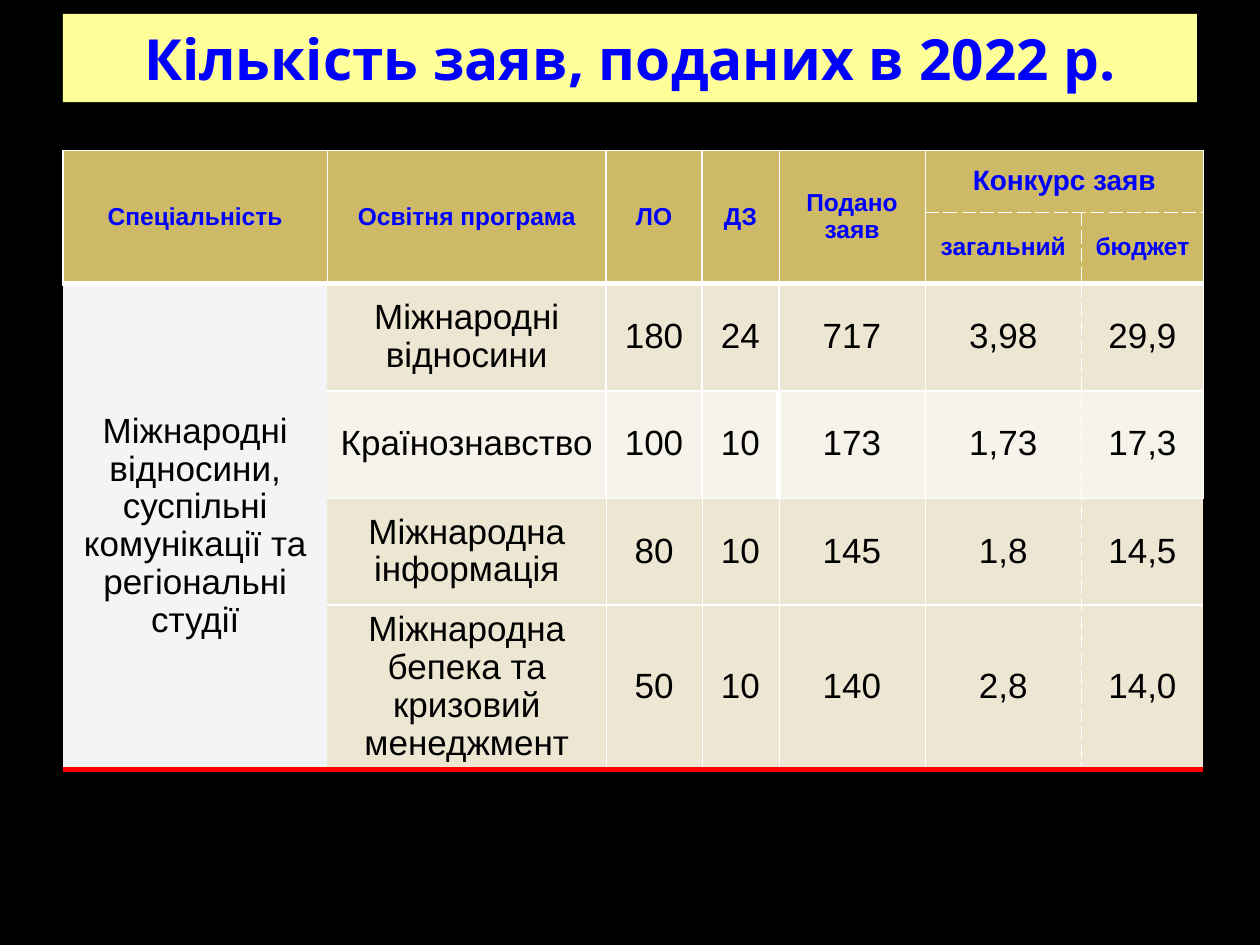
import pptx
import pptx.dml.color
import pptx.enum.shapes
import pptx.enum.text
import pptx.oxml
import pptx.oxml.ns
import pptx.util

Cm = pptx.util.Cm
Pt = pptx.util.Pt

COLORS = {
    "background": "000000", "title": "FFFF99", "heading": "0000FF", "body": "000000",
    "header": "CEB966", "specialty": "F4F3F6", "band": "EDE6D3", "light": "F6F3EA",
    "white": "FFFFFF", "red": "FF0000",
}
TITLE_FORMAT = {"name": "Noto Sans", "size": Pt(32.4), "bold": True}
HEADER_FORMAT = {"name": "Arial", "size": Pt(14), "bold": True}
GROUP_FORMAT = {**HEADER_FORMAT, "size": Pt(16)}
BODY_FORMAT = {"name": "Arial", "size": Pt(20), "bold": False}

COLUMN_WIDTHS = [5.33, 5.62, 1.93, 1.55, 2.95, 3.15, 2.46]
ROW_HEIGHTS = [1.24, 1.45] + [2.16] * 4
ROWS = [
    ["Спеціальність", "Освітня програма", "ЛО", "ДЗ", "Подано заяв", "Конкурс заяв", ""],
    ["", "", "", "", "", "загальний", "бюджет"],
    ["Міжнародні відносини, суспільні комунікації та регіональні студії",
     "Міжнародні відносини", "180", "24", "717", "3,98", "29,9"],
    ["", "Країнознавство", "100", "10", "173", "1,73", "17,3"],
    ["", "Міжнародна інформація", "80", "10", "145", "1,8", "14,5"],
    ["", "Міжнародна бепека та кризовий менеджмент", "50", "10", "140", "2,8", "14,0"],
]
MERGES = [(0, column, 1, column) for column in range(5)] + [(0, 5, 0, 6), (2, 0, 5, 0)]

NONE = None
HAIR = ("white", 0.25, "solid")
DASH = ("white", 0.25, "dash")
THIN = ("white", 1, "solid")
THICK = ("white", 3, "solid")
RED = ("red", 3, "solid")
HORIZONTAL_LINES = [THIN, DASH, THICK, THIN, HAIR, THIN, RED]
HEADER_LINES = [THIN, THIN, THIN, THIN, HAIR, HAIR, DASH, THIN]
LOWER_LINES = [NONE, NONE, HAIR, HAIR, HAIR, HAIR, DASH, NONE]
VERTICAL_LINES = [
    HEADER_LINES,
    HEADER_LINES,
    [NONE, NONE, THIN, THIN, THIN, HAIR, DASH, THIN],
    [NONE, NONE, THIN, THIN, THICK, HAIR, DASH, THIN],
    LOWER_LINES,
    LOWER_LINES,
]
NO_STYLE = "{2D5ABB26-0587-4C30-8999-92F81FD0307C}"


class SlideBuilder:
    def __init__(self, presentation):
        self.slide = presentation.slides.add_slide(presentation.slide_layouts[6])
        self.paint(self.slide.background.fill, "background")

    def paint(self, fill, color):
        fill.solid()
        fill.fore_color.rgb = pptx.dml.color.RGBColor.from_string(COLORS[color])

    def text(self, text_frame, content, color, values, spacing=1.0):
        text_frame.word_wrap = True
        paragraph = text_frame.paragraphs[0]
        paragraph.alignment = pptx.enum.text.PP_ALIGN.CENTER
        paragraph.line_spacing = spacing
        run = paragraph.add_run()
        run.text = content
        for name, value in values.items():
            setattr(run.font, name, value)
        run.font.color.rgb = pptx.dml.color.RGBColor.from_string(COLORS[color])

    def title(self, content, left, top, width, height):
        shape = self.slide.shapes.add_shape(
            pptx.enum.shapes.MSO_SHAPE.RECTANGLE, Cm(left), Cm(top), Cm(width), Cm(height))
        shape.shadow.inherit = False
        shape.line.fill.background()
        self.paint(shape.fill, "title")
        shape.text_frame.vertical_anchor = pptx.enum.text.MSO_ANCHOR.MIDDLE
        self.text(shape.text_frame, content, "heading", TITLE_FORMAT)

    def border(self, cell, side, line):
        if line is None:
            return
        color, width, dash = line
        cell._tc.get_or_add_tcPr().append(pptx.oxml.parse_xml(
            f'<a:ln{side} {pptx.oxml.ns.nsdecls("a")} w="{Pt(width)}">'
            f'<a:solidFill><a:srgbClr val="{COLORS[color]}"/></a:solidFill>'
            f'<a:prstDash val="{dash}"/></a:ln{side}>'))

    def cell(self, cell, row, column, content):
        bottom, right = row + 1, column + 1
        if cell.is_merge_origin:
            bottom, right = row + cell.span_height, column + cell.span_width
        self.border(cell, "L", VERTICAL_LINES[row][column])
        self.border(cell, "R", VERTICAL_LINES[row][right])
        self.border(cell, "T", HORIZONTAL_LINES[row])
        self.border(cell, "B", HORIZONTAL_LINES[bottom])
        if row < 2:
            fill, color = "header", "heading"
            values = GROUP_FORMAT if right - column > 1 else HEADER_FORMAT
        else:
            fill = "specialty" if column == 0 else "light" if row == 3 else "band"
            color, values = "body", BODY_FORMAT
        self.paint(cell.fill, fill)
        cell.vertical_anchor = pptx.enum.text.MSO_ANCHOR.MIDDLE
        self.text(cell.text_frame, content, color, values, 0.97)

    def table(self, left, top, width, height):
        frame = self.slide.shapes.add_table(
            len(ROWS), len(COLUMN_WIDTHS), Cm(left), Cm(top), Cm(width), Cm(height))
        table = frame.table
        table.first_row = table.horz_banding = False
        table._tbl.tblPr.find(pptx.oxml.ns.qn("a:tableStyleId")).text = NO_STYLE
        for column, size in zip(table.columns, COLUMN_WIDTHS):
            column.width = Cm(size)
        for row, size in zip(table.rows, ROW_HEIGHTS):
            row.height = Cm(size)
        frame.height = Cm(height)
        for first_row, first_column, last_row, last_column in MERGES:
            table.cell(first_row, first_column).merge(table.cell(last_row, last_column))
        for row, contents in enumerate(ROWS):
            for column, content in enumerate(contents):
                cell = table.cell(row, column)
                if not cell.is_spanned:
                    self.cell(cell, row, column, content)


def main():
    presentation = pptx.Presentation()
    presentation.slide_width = Cm(25.4)
    presentation.slide_height = Cm(19.05)
    builder = SlideBuilder(presentation)
    builder.title("Кількість заяв, поданих в 2022 р.", 1.27, 0.28, 22.86, 1.78)
    builder.table(1.27, 3.03, 23, 12.78)
    presentation.save("out.pptx")


if __name__ == "__main__":
    main()
